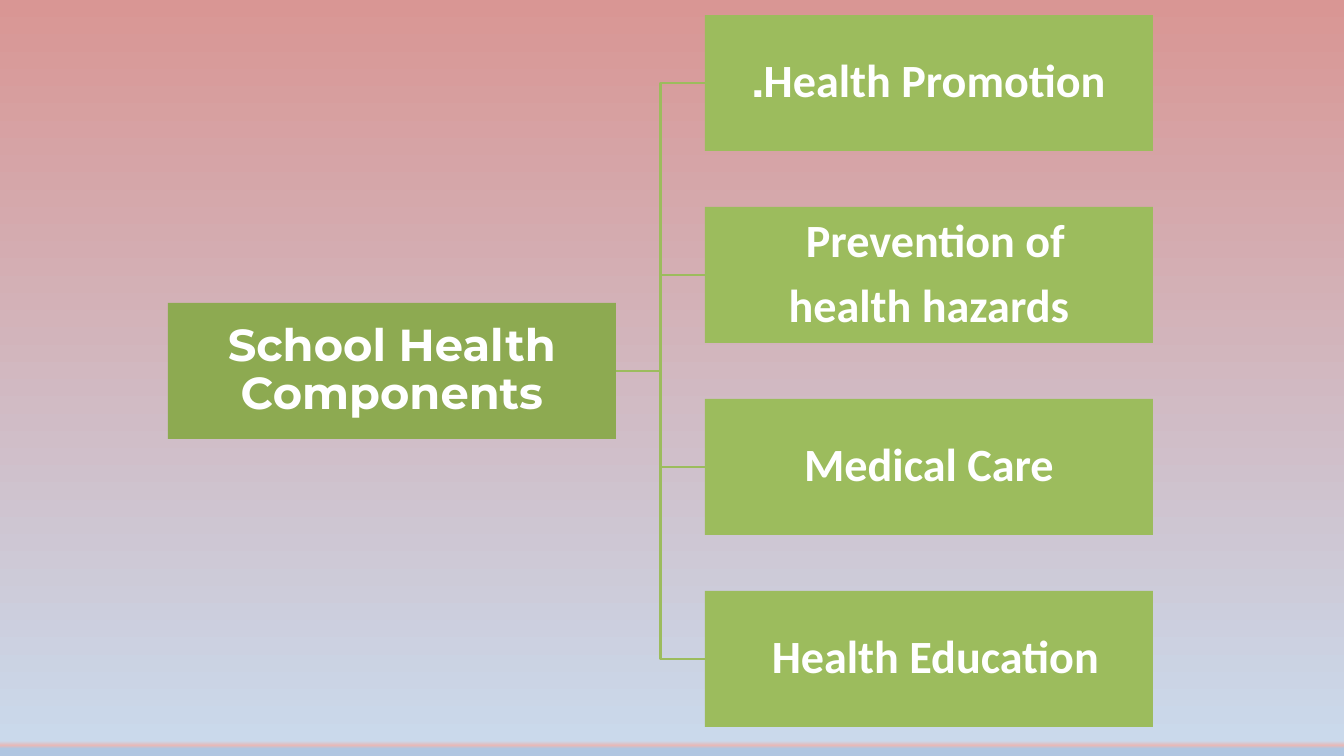
from pptx import Presentation
from pptx.dml.color import RGBColor
from pptx.enum.shapes import MSO_CONNECTOR, MSO_SHAPE
from pptx.enum.text import MSO_ANCHOR, PP_ALIGN
from pptx.oxml.ns import qn
from pptx.util import Pt
from lxml.etree import SubElement

PAGE_WIDTH, PAGE_HEIGHT = 1344, 756
SCALE = 12192000 / PAGE_WIDTH
BOX_WIDTH, BOX_HEIGHT = 448, 136
COLUMN_STEP, ROW_STEP = 537, 192
WHITE, ROOT_GREEN, BRANCH_GREEN = "FFFFFF", "8DAA51", "9CBC5D"
BACKGROUND_STOPS = [(0, "D99694"), (98, "CAD9EB"), (98.6, "E6B9B8"), (99, "B0C6E1")]

ROOT = ["School Health Components"]
# Right-to-left paragraphs: a closing stop or space shows on the left
BRANCHES = [
    ["Health Promotion."],
    ["Prevention of ", "health hazards"],
    ["Medical Care"],
    ["Health Education "],
]


def px(length):
    return round(length * SCALE)


def color(value):
    return RGBColor.from_string(value)


def paint_background(page):
    fill = page.background.fill
    fill.gradient()
    fill.gradient_angle = 270
    stop_list = page.element.find(".//" + qn("a:gsLst"))
    for stop in list(stop_list):
        stop_list.remove(stop)
    for position, value in BACKGROUND_STOPS:
        stop = SubElement(stop_list, qn("a:gs"), pos=str(round(position * 1000)))
        SubElement(stop, qn("a:srgbClr"), val=value)


def add_box(page, left, top, lines, fill, font, size):
    box = page.shapes.add_shape(
        MSO_SHAPE.RECTANGLE, px(left), px(top), px(BOX_WIDTH), px(BOX_HEIGHT))
    box.shadow.inherit = False
    box.fill.solid()
    box.fill.fore_color.rgb = color(fill)
    box.line.fill.background()

    frame = box.text_frame
    frame.word_wrap = True
    frame.vertical_anchor = MSO_ANCHOR.MIDDLE
    frame.margin_left = frame.margin_right = px(2)
    frame.margin_top = frame.margin_bottom = px(2)
    for index, line in enumerate(lines):
        para = frame.add_paragraph() if index else frame.paragraphs[0]
        para.alignment = PP_ALIGN.CENTER
        para.line_spacing = 0.9
        para.space_after = Pt(11)
        para._p.get_or_add_pPr().set("rtl", "1")
        span = para.add_run()
        span.text = line
        span.font.name = font
        span.font.size = Pt(size)
        span.font.bold = True
        span.font.color.rgb = color(WHITE)
    return box


def join_boxes(page, root, branch):
    link = page.shapes.add_connector(MSO_CONNECTOR.ELBOW, 0, 0, 0, 0)
    link.begin_connect(root, 3)
    link.end_connect(branch, 1)
    link.line.color.rgb = color(BRANCH_GREEN)
    link.line.width = Pt(2)
    SubElement(link.element.spPr, qn("a:effectLst"))


def add_hierarchy(page, left, top):
    # Root box, centred on the column of branches
    root_top = top + ROW_STEP * (len(BRANCHES) - 1) / 2
    root = add_box(page, left, root_top, ROOT, ROOT_GREEN, "Montserrat", 32)

    # Branch boxes and their links to the root
    for row, lines in enumerate(BRANCHES):
        branch = add_box(page, left + COLUMN_STEP, top + row * ROW_STEP,
                         lines, BRANCH_GREEN, "Calibri", 33)
        join_boxes(page, root, branch)


def main():
    deck = Presentation()
    deck.slide_width, deck.slide_height = px(PAGE_WIDTH), px(PAGE_HEIGHT)
    page = deck.slides.add_slide(deck.slide_layouts.get_by_name("Blank"))
    paint_background(page)
    add_hierarchy(page, 168, 15)
    deck.save("out.pptx")


if __name__ == "__main__":
    main()
